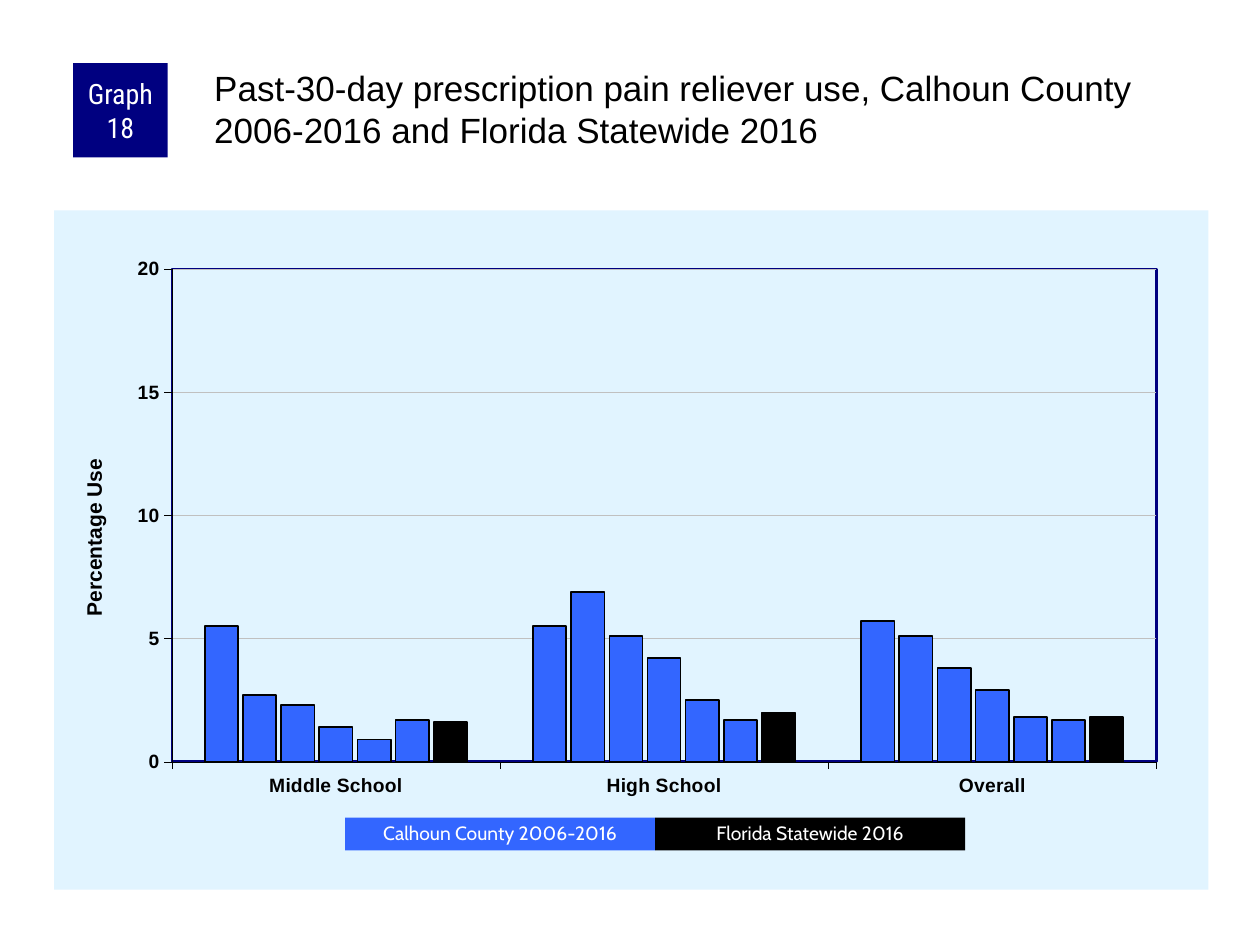
from lxml.etree import SubElement
from pptx import Presentation
from pptx.chart.data import CategoryChartData
from pptx.dml.color import RGBColor
from pptx.enum.chart import XL_CHART_TYPE, XL_TICK_MARK
from pptx.enum.shapes import MSO_SHAPE
from pptx.enum.text import MSO_ANCHOR, PP_ALIGN
from pptx.oxml import parse_xml
from pptx.oxml.ns import nsdecls, qn
from pptx.util import Inches, Pt

COLORS = {"navy": "000080", "blue": "3366FF", "black": "000000",
          "white": "FFFFFF", "panel": "E1F4FF", "grid": "C0C0C0"}


def set_font(font, **values):
    font.color.rgb = RGBColor.from_string(COLORS[values.pop("color")])
    for name, value in values.items():
        setattr(font, name, value)


def manual_layout(parent, position, **values):
    for old in parent.findall(qn("c:layout")):
        parent.remove(old)
    layout = parse_xml(f"<c:layout {nsdecls('c')}><c:manualLayout/></c:layout>")
    for name, value in values.items():
        SubElement(layout[0], qn(f"c:{name}")).set("val", str(value))
    parent.insert(position, layout)


deck = Presentation()
deck.slide_width, deck.slide_height = Inches(10), Inches(7.5)
page = deck.slides.add_slide(deck.slide_layouts[6])

usage = [
    (5.5, 5.5, 5.7),
    (2.7, 6.9, 5.1),
    (2.3, 5.1, 3.8),
    (1.4, 4.2, 2.9),
    (0.9, 2.5, 1.8),
    (1.7, 1.7, 1.7),
    (1.6, 2, 1.8),
]
data = CategoryChartData()
data.categories = ["Middle School", "High School", "Overall"]
for number, values in enumerate(usage, 1):
    data.add_series(f"Series {number}", values)

chart = page.shapes.add_chart(
    XL_CHART_TYPE.COLUMN_CLUSTERED, Inches(0.43), Inches(1.67),
    Inches(9.16), Inches(5.39), data).chart
chart.has_title = False
chart.has_legend = False
set_font(chart.font, name="Arial", size=Pt(8), color="black")

plot = chart.plots[0]
for name, value in {"gap_width": 200, "overlap": -15, "vary_by_categories": False}.items():
    setattr(plot, name, value)
for series in plot.series:
    fill = "black" if series.name == "Series 7" else "blue"
    series.format.fill.solid()
    series.format.fill.fore_color.rgb = RGBColor.from_string(COLORS[fill])
    series.format.line.color.rgb = RGBColor.from_string(COLORS["black"])
    series.format.line.width = Pt(1)

value_axis = chart.value_axis
for name, value in {"minimum_scale": 0, "maximum_scale": 20, "major_unit": 5,
                    "has_major_gridlines": True}.items():
    setattr(value_axis, name, value)
for axis in (chart.category_axis, value_axis):
    axis.major_tick_mark = XL_TICK_MARK.OUTSIDE
    axis.minor_tick_mark = XL_TICK_MARK.NONE
    set_font(axis.tick_labels.font, name="Arial", size=Pt(11), bold=True, color="black")
for line, color in ((chart.category_axis.format.line, "black"),
                    (value_axis.format.line, "black"),
                    (value_axis.major_gridlines.format.line, "grid")):
    line.color.rgb = RGBColor.from_string(COLORS[color])
    line.width = Pt(0.25)

title = value_axis.axis_title
title.text_frame.text = "Percentage Use"
set_font(title.text_frame.paragraphs[0].runs[0].font,
         name="Arial", size=Pt(12), bold=True, color="black")
title_element = value_axis._element.find(qn("c:title"))
manual_layout(title_element, 1, xMode="edge", yMode="edge", x=0.02, y=0.36)
title_element.find(".//" + qn("a:bodyPr")).set("rot", "-5400000")
title_element.find(".//" + qn("a:bodyPr")).set("vert", "horz")

space = chart._chartSpace
plot_area = space.chart.plotArea
manual_layout(plot_area, 0, layoutTarget="inner", xMode="edge", yMode="edge",
              x=0.102, y=0.086, w=0.853, h=0.726)
plot_area.append(parse_xml(
    f'<c:spPr {nsdecls("c", "a")}><a:noFill/><a:ln w="19050"><a:solidFill>'
    f'<a:srgbClr val="{COLORS["navy"]}"/></a:solidFill></a:ln></c:spPr>'))
space.chart.addnext(parse_xml(
    f'<c:spPr {nsdecls("c", "a")}><a:solidFill><a:srgbClr val="{COLORS["panel"]}"/>'
    '</a:solidFill><a:ln><a:noFill/></a:ln></c:spPr>'))

labels = [
    ("Graph 18", 0.58, 0.5, 0.75, 0.75, "navy", "Roboto Condensed", 16, 0.05, 0, 1),
    ("Calhoun County 2006-2016", 2.74, 6.49, 2.46, 0.26, "blue", "Cabin", 11, 0.1, 0.05, 0.9),
    ("Florida Statewide 2016", 5.2, 6.49, 2.46, 0.26, "black", "Cabin", 11, 0.1, 0.05, 0.9),
]
for text, left, top, width, height, fill, font, size, side, edge, spacing in labels:
    box = page.shapes.add_shape(MSO_SHAPE.RECTANGLE, Inches(left), Inches(top),
                                Inches(width), Inches(height))
    box.shadow.inherit = False
    box.fill.solid()
    box.fill.fore_color.rgb = RGBColor.from_string(COLORS[fill])
    box.line.fill.background()
    frame = box.text_frame
    for name, value in {"word_wrap": True, "vertical_anchor": MSO_ANCHOR.MIDDLE,
                        "margin_left": Inches(side), "margin_right": Inches(side),
                        "margin_top": Inches(edge), "margin_bottom": Inches(edge)}.items():
        setattr(frame, name, value)
    para = frame.paragraphs[0]
    para.alignment = PP_ALIGN.CENTER
    para.line_spacing = spacing
    span = para.add_run()
    span.text = text
    set_font(span.font, name=font, size=Pt(size), color="white")

heading = page.shapes.add_textbox(Inches(1.67), Inches(0.5), Inches(7.92), Inches(0.83))
frame = heading.text_frame
for name, value in {"word_wrap": True, "margin_left": Inches(0.03), "margin_top": Inches(0.03),
                    "margin_right": 0, "margin_bottom": 0}.items():
    setattr(frame, name, value)
span = frame.paragraphs[0].add_run()
span.text = ("Past-30-day prescription pain reliever use, Calhoun County "
             "2006-2016 and Florida Statewide 2016")
set_font(span.font, name="Arial", size=Pt(20), color="black")

deck.save("out.pptx")
